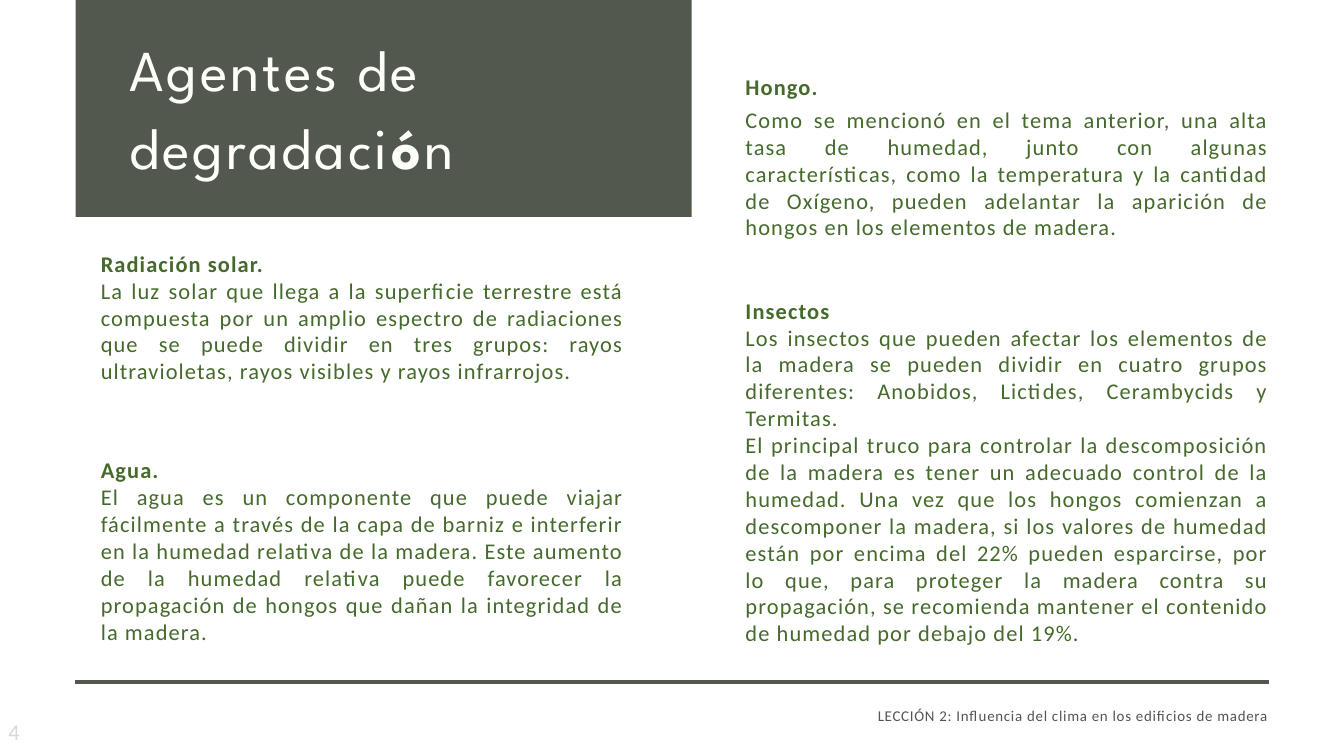
from pptx import Presentation
from pptx.dml.color import RGBColor
from pptx.enum.shapes import MSO_SHAPE
from pptx.enum.text import MSO_ANCHOR, MSO_AUTO_SIZE, PP_ALIGN
from pptx.util import Emu, Pt

PX = 9525
TITLE_ONLY_LAYOUT = 5
BODY_FONT = "Calibri"
GREEN = "456A2C"
SLATE = "52584D"
IVORY = "FEFFF8"
PALE_GRAY = "D9D9D9"

COLUMN_WIDTH = 747
LEFT_COLUMN = 144
RIGHT_COLUMN = 1065

# left, top, height, heading alignment, space after, heading, paragraphs
SECTIONS = [
    (LEFT_COLUMN, 357, 232, PP_ALIGN.JUSTIFY, 0, "Radiación solar.", [
        "La luz solar que llega a la superficie terrestre está compuesta por un "
        "amplio espectro de radiaciones que se puede dividir en tres grupos: rayos "
        "ultravioletas, rayos visibles y rayos infrarrojos."]),
    (LEFT_COLUMN, 652, 272, PP_ALIGN.JUSTIFY, 0, "Agua.", [
        "El agua es un componente que puede viajar fácilmente a través de la capa "
        "de barniz e interferir en la humedad relativa de la madera. Este aumento "
        "de la humedad relativa puede favorecer la propagación de hongos que dañan "
        "la integridad de la madera."]),
    (RIGHT_COLUMN, 105, 261, PP_ALIGN.LEFT, 6, "Hongo.", [
        "Como se mencionó en el tema anterior, una alta tasa de humedad, junto con "
        "algunas características, como la temperatura y la cantidad de Oxígeno, "
        "pueden adelantar la aparición de hongos en los elementos de madera."]),
    (RIGHT_COLUMN, 424, 582, PP_ALIGN.LEFT, 0, "Insectos", [
        "Los insectos que pueden afectar los elementos de la madera se pueden "
        "dividir en cuatro grupos diferentes: Anobidos, Lictides, Cerambycids y "
        "Termitas.",
        "El principal truco para controlar la descomposición de la madera es tener "
        "un adecuado control de la humedad. Una vez que los hongos comienzan a "
        "descomponer la madera, si los valores de humedad están por encima del 22% "
        "pueden esparcirse, por lo que, para proteger la madera contra su "
        "propagación, se recomienda mantener el contenido de humedad por debajo "
        "del 19%."]),
]


def px(length):
    return Emu(length * PX)


def color(hex_string):
    return RGBColor.from_string(hex_string)


def add_run(paragraph, text, size, hex_color, spacing, bold=False, font=BODY_FONT):
    """Add a run; spacing is the letter spacing in hundredths of a point."""
    run = paragraph.add_run()
    run.text = text
    run.font.name = font
    run.font.size = Pt(size)
    run.font.bold = bold
    run.font.color.rgb = color(hex_color)
    run._r.get_or_add_rPr().set("spc", str(spacing))


def prepare_frame(shape, anchor=MSO_ANCHOR.TOP):
    """Make the text wrap without margins and return the text frame."""
    frame = shape.text_frame
    frame.word_wrap = True
    frame.auto_size = MSO_AUTO_SIZE.NONE
    frame.vertical_anchor = anchor
    frame.margin_left = frame.margin_right = 0
    frame.margin_top = frame.margin_bottom = 0
    return frame


def add_text_box(slide, left, top, width, height, anchor=MSO_ANCHOR.TOP):
    box = slide.shapes.add_textbox(px(left), px(top), px(width), px(height))
    return prepare_frame(box, anchor)


def add_rectangle(slide, left, top, width, height):
    rectangle = slide.shapes.add_shape(
        MSO_SHAPE.RECTANGLE, px(left), px(top), px(width), px(height))
    rectangle.shadow.inherit = False
    rectangle.fill.solid()
    rectangle.fill.fore_color.rgb = color(SLATE)
    rectangle.line.fill.background()
    return rectangle


def add_title(slide):
    """Fill the title placeholder and lay its banner behind it."""
    title = slide.shapes.title
    title.left, title.top, title.width, title.height = map(px, (185, 36, 726, 223))
    title.fill.solid()
    title.fill.fore_color.rgb = color(SLATE)
    paragraph = prepare_frame(title).paragraphs[0]
    paragraph.alignment = PP_ALIGN.LEFT
    paragraph.line_spacing = Pt(83.7)
    for text, bold in (("Agentes de degradaci", False), ("ó", True), ("n", False)):
        add_run(paragraph, text, 62, IVORY, 310, bold, "League Spartan")
    banner = add_rectangle(slide, 108, -33, 880, 343)
    title.element.addprevious(banner.element)


def add_section(slide, left, top, height, heading_alignment, space_after, heading, texts):
    frame = add_text_box(slide, left, top, COLUMN_WIDTH, height)
    for index, text in enumerate([heading, *texts]):
        is_heading = index == 0
        paragraph = frame.paragraphs[0] if is_heading else frame.add_paragraph()
        paragraph.alignment = heading_alignment if is_heading else PP_ALIGN.JUSTIFY
        paragraph.space_after = Pt(space_after)
        add_run(paragraph, text, 24, GREEN, 120, is_heading)


def add_footer(slide):
    rule = add_rectangle(slide, 108, 972, 1704, 4)
    rule.line.color.rgb = color(SLATE)
    rule.line.width = Pt(0.75)

    number = add_text_box(slide, 12, 1026, 214, 38, MSO_ANCHOR.MIDDLE)
    add_run(number.paragraphs[0], "4", 24, PALE_GRAY, 120)

    lesson = add_text_box(slide, 1014, 1005, 798, 28).paragraphs[0]
    lesson.alignment = PP_ALIGN.RIGHT
    lesson.line_spacing = Pt(22.4)
    add_run(lesson, "LECCIÓN 2: Influencia del clima en los edificios de madera",
            16, SLATE, 80)


def main():
    presentation = Presentation()
    presentation.slide_width = px(1920)
    presentation.slide_height = px(1080)
    slide = presentation.slides.add_slide(presentation.slide_layouts[TITLE_ONLY_LAYOUT])
    add_title(slide)
    for section in SECTIONS:
        add_section(slide, *section)
    add_footer(slide)
    presentation.save("out.pptx")


if __name__ == "__main__":
    main()
